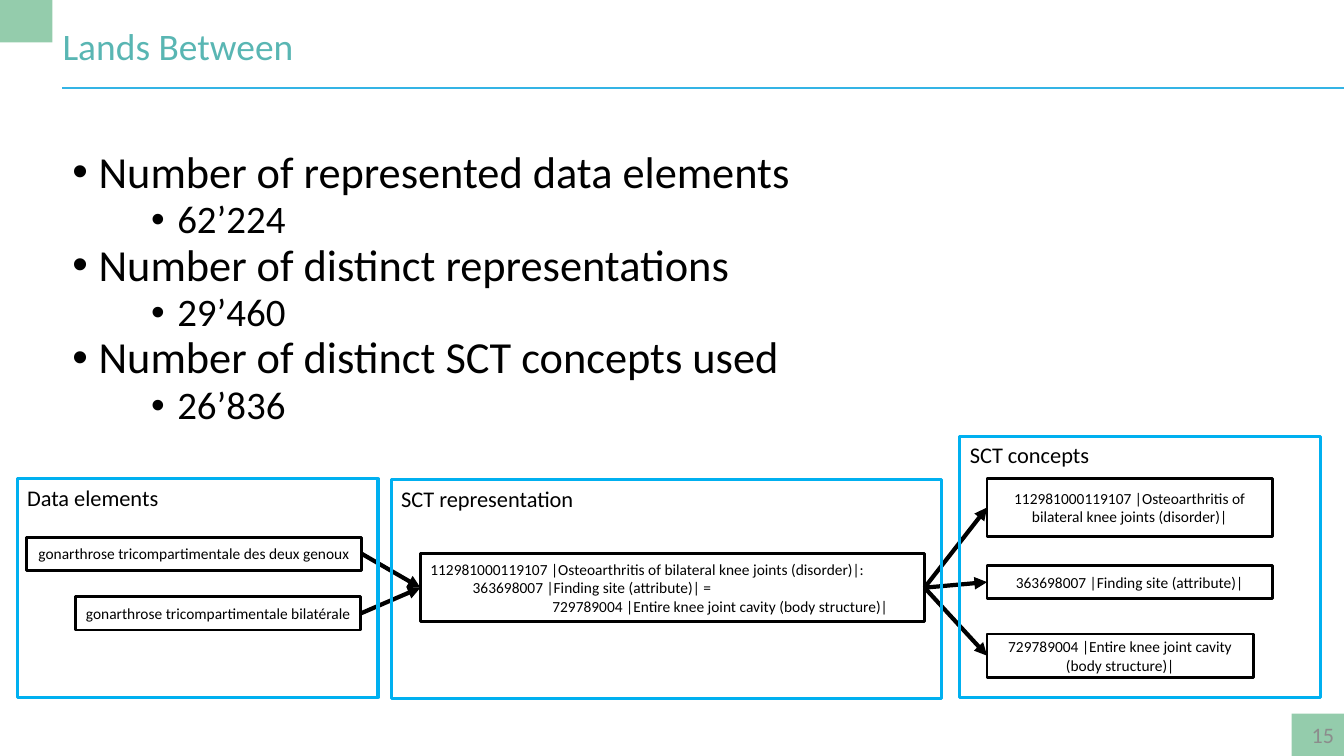
from pptx import Presentation
from pptx import util as u
from pptx.dml.color import RGBColor
from pptx.enum import shapes, text
from pptx.oxml.ns import qn
from lxml import etree

PX = 9144  # 100 px to the inch
THEME = {
    "font": "Calibri", "ink": "000000", "title": "59B6B3", "number": "8C8C8C",
    "corner": "94CCAC", "rule": "34B4E5", "frame": "00B0F0",
    "title_size": 26.7, "bullet_size": 31.7, "value_size": 27.8,
    "number_size": 15.8, "frame_size": 16, "box_size": 11,
}

prs = Presentation()
prs.slide_width, prs.slide_height = 1333 * PX, 750 * PX
s = prs.slides.add_slide(prs.slide_layouts[6])


def write(sp, lines, size, color="ink", align="LEFT", anchor="TOP", inset=(10, 5)):
    """Fill a shape with (text, options) lines; options: indent, hang, spacing, size."""
    tf = sp.text_frame
    tf.word_wrap = True
    tf.vertical_anchor = text.MSO_ANCHOR[anchor]
    tf.margin_left = tf.margin_right = inset[0] * PX
    tf.margin_top = tf.margin_bottom = inset[1] * PX
    for i, (line, opts) in enumerate(lines):
        p = tf.add_paragraph() if i else tf.paragraphs[0]
        p.alignment = text.PP_ALIGN[align]
        p.line_spacing = opts.get("spacing")
        pPr = p._p.get_or_add_pPr()
        pPr.set("marL", str(opts.get("indent", 0) * PX))
        if "hang" in opts:
            pPr.set("indent", str(-opts["hang"] * PX))
            etree.SubElement(pPr, qn("a:buFont"), typeface="Arial")
            etree.SubElement(pPr, qn("a:buChar"), char="•")
        r = p.add_run()
        r.text = line
        r.font.name = THEME["font"]
        r.font.size = u.Pt(opts.get("size", size))
        r.font.color.rgb = RGBColor.from_string(THEME[color])


def rect(x, y, w, h, fill=None, line=None, width=2):
    sp = s.shapes.add_shape(shapes.MSO_SHAPE.RECTANGLE, x * PX, y * PX, w * PX, h * PX)
    sp.shadow.inherit = False
    if fill:
        sp.fill.solid()
        sp.fill.fore_color.rgb = RGBColor.from_string(THEME[fill])
    else:
        sp.fill.background()
    if line:
        sp.line.color.rgb = RGBColor.from_string(THEME[line])
        sp.line.width = u.Pt(width)
    else:
        sp.line.fill.background()
    return sp


# Page furniture
for x, y in ((1281, 708), (0, 0)):
    rect(x, y, 52, 42, fill="corner")
rule = s.shapes.add_connector(shapes.MSO_CONNECTOR.STRAIGHT,
                              62 * PX, 87 * PX, 1333 * PX, 87 * PX)
rule.line.color.rgb = RGBColor.from_string(THEME["rule"])
rule.line.width = u.Pt(1.42)
etree.SubElement(rule._element.spPr, qn("a:effectLst"))

# Title, bullets and slide number
counts = (
    ("Number of represented data elements", "62’224"),
    ("Number of distinct representations", "29’460"),
    ("Number of distinct SCT concepts used", "26’836"),
)
bullets = []
for label, value in counts:
    bullets.append((label, {"indent": 26, "hang": 26, "spacing": 0.9}))
    bullets.append((value, {"indent": 104, "hang": 26, "spacing": 0.96,
                            "size": THEME["value_size"]}))
body = s.shapes.add_textbox(62 * PX, 144 * PX, 1204 * PX, 290 * PX)
write(body, bullets, THEME["bullet_size"])
title = s.shapes.add_textbox(62 * PX, 23 * PX, 1181 * PX, 45 * PX)
write(title, [("Lands Between", {})], THEME["title_size"], "title", inset=(0, 0))
number = s.shapes.add_textbox(1195 * PX, 709 * PX, 138 * PX, 40 * PX)
write(number, [("15", {})], THEME["number_size"], "number", "RIGHT", "MIDDLE")

# Boxes of the mapping diagram
elements = (
    (26, 533, 333, 33, "gonarthrose tricompartimentale des deux genoux"),
    (75, 592, 283, 33, "gonarthrose tricompartimentale bilatérale"),
)
concepts = (
    (979, 475, 283, 57, "112981000119107 |Osteoarthritis of bilateral knee joints (disorder)|"),
    (979, 561, 283, 33, "363698007 |Finding site (attribute)|"),
    (979, 629, 264, 43, "729789004 |Entire knee joint cavity (body structure)|"),
)
boxes = []
for *place, label in elements + concepts:
    sp = rect(*place, line="ink")
    write(sp, [(label, {})], THEME["box_size"], align="CENTER", anchor="MIDDLE")
    boxes.append(sp)
representation = rect(417, 549, 500, 68, line="ink")
write(representation, [
    ("112981000119107 |Osteoarthritis of bilateral knee joints (disorder)|:", {}),
    ("363698007 |Finding site (attribute)| =", {"indent": 42}),
    ("729789004 |Entire knee joint cavity (body structure)|", {"indent": 121}),
], THEME["box_size"], anchor="MIDDLE")

# Arrows into and out of the representation
links = [(sp, representation) for sp in boxes[:len(elements)]]
links += [(representation, sp) for sp in boxes[len(elements):]]
for start, end in links:
    arrow = s.shapes.add_connector(shapes.MSO_CONNECTOR.STRAIGHT, 0, 0, 0, 0)
    arrow.begin_connect(start, 3)
    arrow.end_connect(end, 1)
    arrow.line.color.rgb = RGBColor.from_string(THEME["ink"])
    arrow.line.width = u.Pt(3)
    etree.SubElement(arrow.line._get_or_add_ln(), qn("a:tailEnd"), type="triangle")
    etree.SubElement(arrow._element.spPr, qn("a:effectLst"))

# Frames around the three groups
frames = (
    (17, 475, 358, 217, "Data elements"),
    (388, 476, 546, 217, "SCT representation"),
    (952, 433, 358, 259, "SCT concepts"),
)
for *place, label in frames:
    write(rect(*place, line="frame", width=2.25), [(label, {})], THEME["frame_size"])

prs.save("out.pptx")
